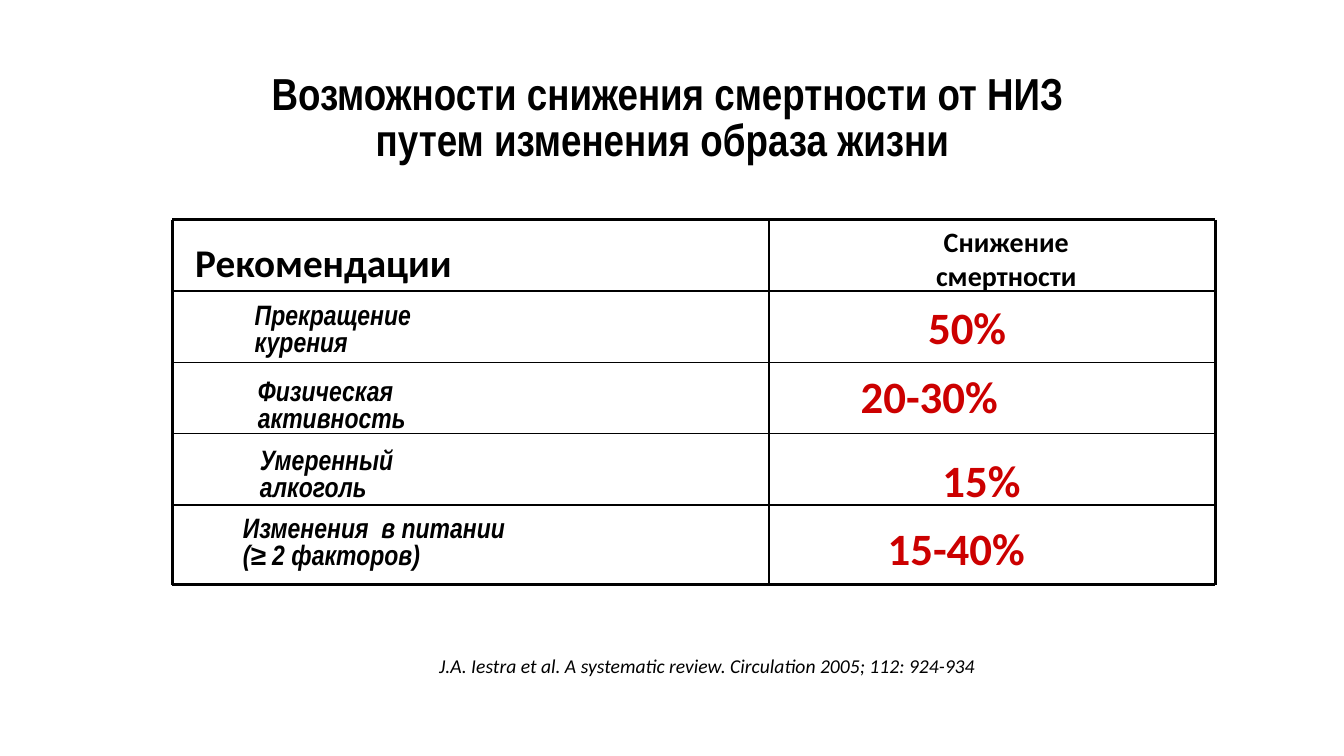
from pptx import Presentation
from pptx.dml.color import RGBColor
from pptx.enum.shapes import MSO_CONNECTOR as Connector
from pptx.enum.text import MSO_AUTO_SIZE as AutoSize, PP_ALIGN as Align
from pptx.oxml import parse_xml
from pptx.oxml.ns import nsdecls
from pptx.util import Cm, Pt

COLORS = {"text": "000000", "value": "CC0000", "border": "000000"}

# Text styles: font, size, colour, bold, italic, alignment, line spacing
STYLES = {
    "title": ("Arial Narrow", 32, "text", True, False, Align.CENTER, 0.85),
    "heading": ("Calibri", 28, "text", True, False, Align.LEFT, None),
    "subheading": ("Calibri", 20, "text", True, False, Align.CENTER, None),
    "advice": ("Arial Narrow", 20, "text", True, True, Align.LEFT, 0.8),
    "value": ("Calibri", 32, "value", True, False, Align.LEFT, None),
    "source": ("Calibri", 14, "text", False, True, Align.LEFT, None),
}

# Positions of the rules of the grid
ROW_EDGES = [5.54, 7.33, 9.13, 10.93, 12.73, 14.73]
COLUMN_EDGES = [4.34, 19.38, 30.63]

# Texts: wording, style, left, top, width, height
TEXTS = [
    ("Возможности снижения смертности от НИЗ\nпутем изменения образа жизни ",
     "title", 0.33, 1.75, 33, 2.59),
    ("Рекомендации", "heading", 4.67, 5.89, 12.07, 1.45),
    ("Снижение \nсмертности ", "subheading", 21.82, 5.54, 7.24, 1.96),
    ("Прекращение\nкурения", "advice", 6.17, 7.54, 7.98, 1.63),
    ("Физическая\nактивность", "advice", 6.25, 9.45, 7.29, 1.63),
    ("Умеренный\nалкоголь", "advice", 6.3, 11.18, 6.68, 1.63),
    ("Изменения  в питании\n(≥ 2 факторов)", "advice", 5.87, 12.9, 12.24, 1.63),
    ("50%", "value", 23.14, 7.44, 4.29, 1.63),
    ("20-30%", "value", 21.44, 9.17, 6.86, 1.63),
    ("15%", "value", 23.5, 11.28, 4.29, 1.63),
    ("15-40%", "value", 22.12, 13, 6.86, 1.63),
    ("J.A. Iestra et al. A systematic review. Circulation 2005; 112: 924-934",
     "source", 10.82, 16.36, 14.15, 0.86),
]

deck = Presentation()
deck.slide_width, deck.slide_height = Cm(33.87), Cm(19.05)
page = deck.slides.add_slide(deck.slide_layouts[6])

# Grid with a thick outer frame and thin inner rules
left, right = COLUMN_EDGES[0], COLUMN_EDGES[-1]
top, bottom = ROW_EDGES[0], ROW_EDGES[-1]
rules = [(left, y, right, y, y in (top, bottom)) for y in ROW_EDGES]
rules += [(x, top, x, bottom, x in (left, right)) for x in COLUMN_EDGES]
for x1, y1, x2, y2, outer in rules:
    rule = page.shapes.add_connector(Connector.STRAIGHT, Cm(x1), Cm(y1), Cm(x2), Cm(y2))
    rule.line.color.rgb = RGBColor.from_string(COLORS["border"])
    rule.line.width = Pt(2.25 if outer else 1)
    rule._element.spPr.append(parse_xml(f'<a:effectLst {nsdecls("a")}/>'))

# Title, cell texts and literature reference
for text, style, x, y, width, height in TEXTS:
    font, size, color, bold, italic, align, spacing = STYLES[style]
    box = page.shapes.add_textbox(Cm(x), Cm(y), Cm(width), Cm(height))
    frame = box.text_frame
    frame.word_wrap = style == "title"
    frame.auto_size = AutoSize.SHAPE_TO_FIT_TEXT
    frame.text = text
    for para in frame.paragraphs:
        para.alignment = align
        para.line_spacing = spacing
        for span in para.runs:
            span.font.name = font
            span.font.size = Pt(size)
            span.font.bold = bold
            span.font.italic = italic
            span.font.color.rgb = RGBColor.from_string(COLORS[color])

deck.save("out.pptx")
